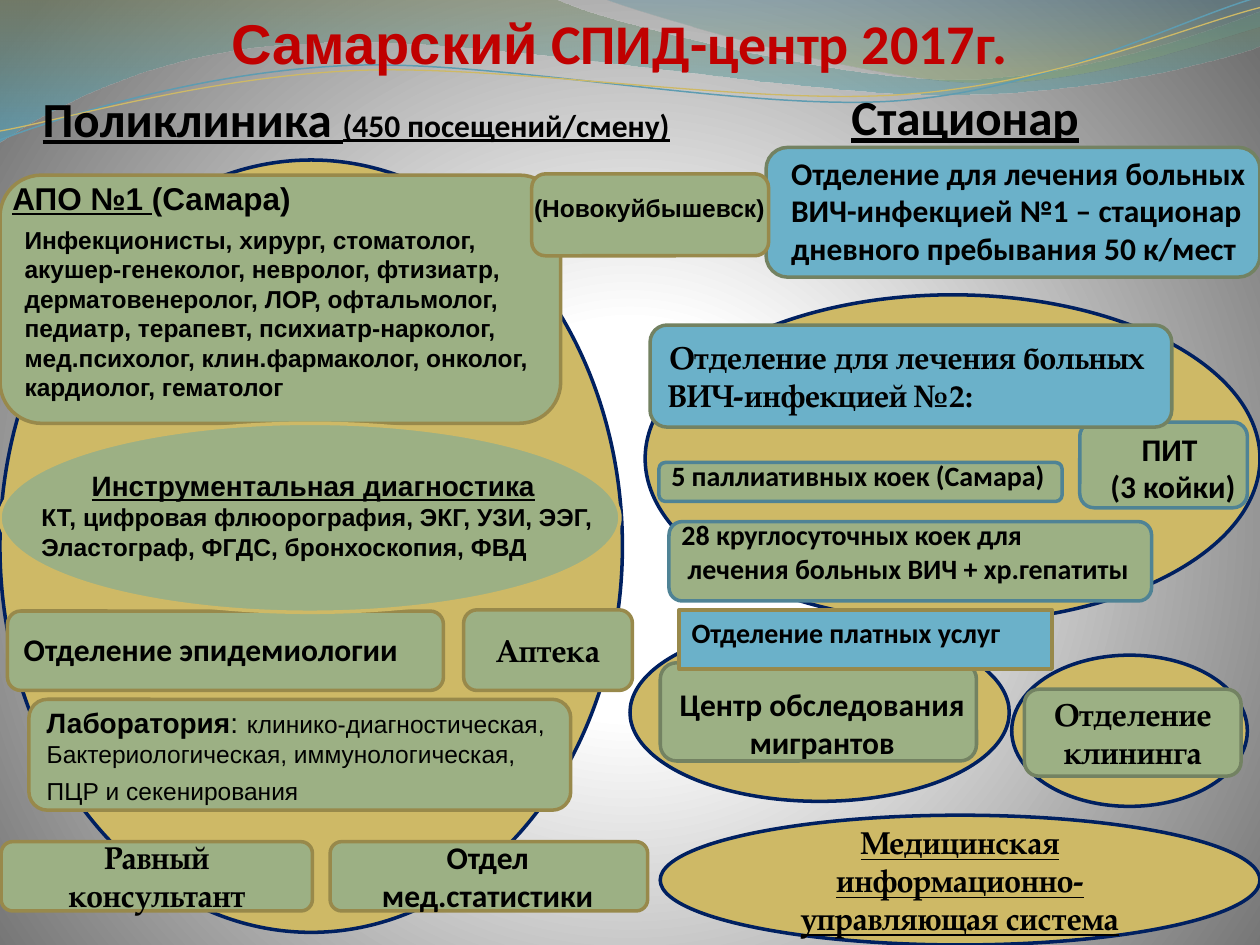
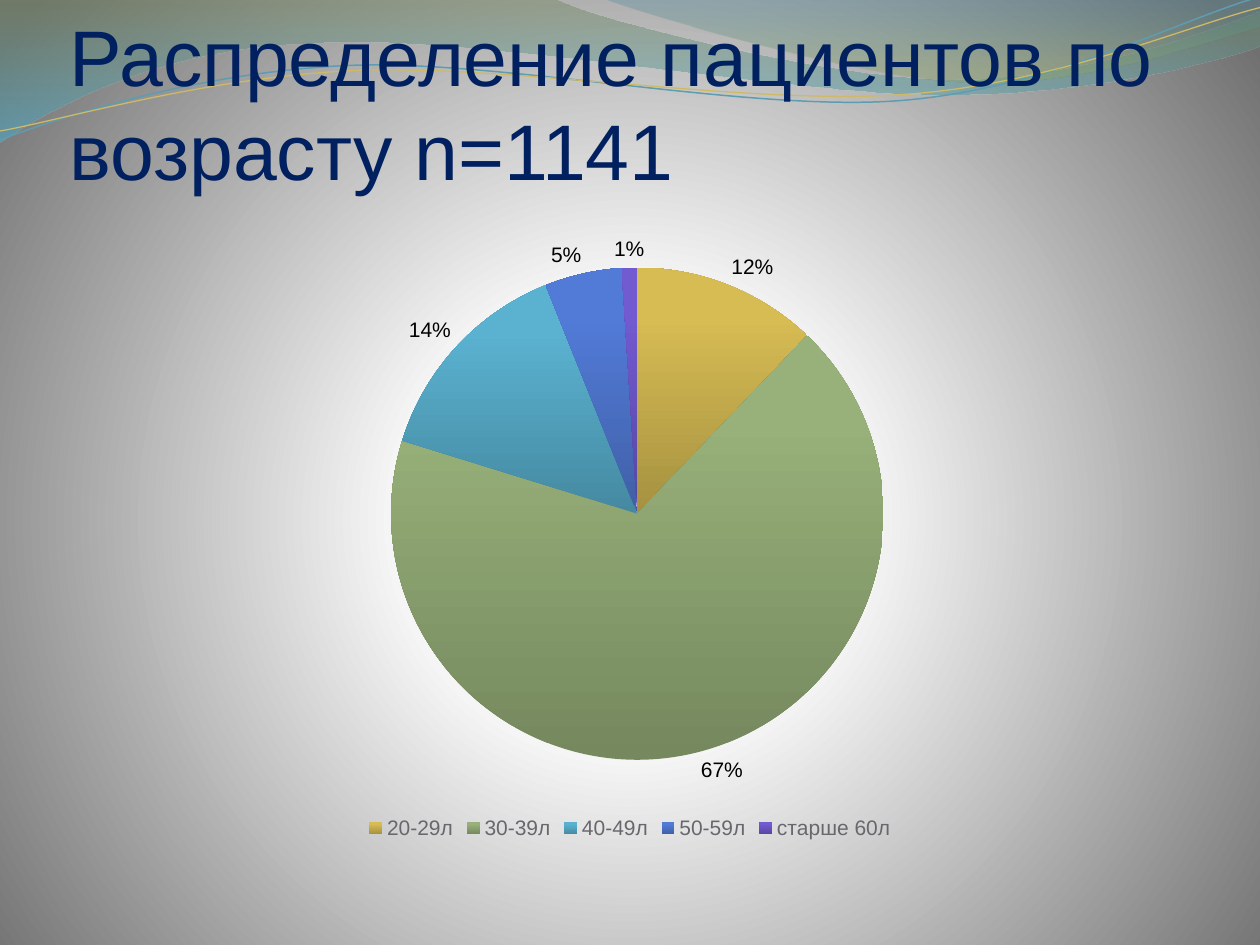
from copy import deepcopy
from dataclasses import dataclass

from lxml.etree import SubElement
from pptx import Presentation
from pptx.chart.data import CategoryChartData
from pptx.dml.color import RGBColor
from pptx.enum.chart import XL_CHART_TYPE, XL_LABEL_POSITION, XL_LEGEND_POSITION
from pptx.enum.shapes import MSO_SHAPE
from pptx.enum.text import MSO_ANCHOR, MSO_AUTO_SIZE, PP_ALIGN
from pptx.oxml.ns import qn
from pptx.util import Inches, Pt


@dataclass(frozen=True)
class Theme:
    sand: str = "CEB966"
    green: str = "9CB084"
    blue: str = "6BB1C9"
    navy: str = "002060"
    olive: str = "98894B"
    moss: str = "738262"
    steel: str = "4F8395"
    red: str = "C00000"
    black: str = "000000"
    gray: str = "69676D"
    white: str = "FFFFFF"
    dusk: str = "707070"
    sans: str = "Arial"
    plain: str = "Calibri"
    serif: str = "TeX Gyre Pagella"
    huge: int = 45
    title: int = 32
    head: int = 28
    main: int = 18
    mid: int = 16
    small: int = 14
    chart: int = 12
    edge: int = 2


T = Theme()
LEFT, MID = PP_ALIGN.LEFT, PP_ALIGN.CENTER


def say(frame, paras, anchor=MSO_ANCHOR.TOP, top=0.05, **form):
    """Write paragraphs, each a string or a list of (text, format) runs."""
    base = dict(size=T.main, font=T.plain, color=T.black, bold=True,
                under=False, align=LEFT, indent=0, before=0) | form
    frame.word_wrap = True
    frame.vertical_anchor = anchor
    frame.margin_top = Inches(top)
    for i, para in enumerate(paras):
        runs = [(para, {})] if isinstance(para, str) else para
        p = frame.paragraphs[0] if i == 0 else frame.add_paragraph()
        look = base | runs[0][1]
        p.alignment = look["align"]
        p.space_before = Pt(look["before"])
        if look["indent"]:
            p._p.get_or_add_pPr().set("indent", str(Inches(look["indent"])))
        for text, extra in runs:
            look = base | extra
            run = p.add_run()
            run.text = text
            run.font.size = Pt(look["size"])
            run.font.name = look["font"]
            run.font.bold = look["bold"]
            run.font.underline = look["under"]
            run.font.color.rgb = RGBColor.from_string(look["color"])


def fade(fill, stops, angle):
    """Fill with a two-stop gradient; the angle runs counter-clockwise."""
    fill.gradient()
    fill.gradient_angle = angle
    for stop, (place, color) in zip(fill.gradient_stops, stops):
        stop.position = place
        stop.color.rgb = RGBColor.from_string(color)


deck = Presentation()
deck.slide_width, deck.slide_height = Inches(10), Inches(7.5)
master = deck.slide_master
plan = deck.slide_layouts[5]
first, second = (deck.slides.add_slide(plan) for _ in range(2))

# Shared background: white glow in the middle, gray at the rim
fade(master.background.fill, [(0.25, T.white), (1, T.dusk)], 0)
grad = master.element.find(".//" + qn("a:gradFill"))
grad.remove(grad.find(qn("a:lin")))
stops = grad.find(qn("a:gsLst"))
stops.insert(0, deepcopy(stops[0]))
stops[0].set("pos", "0")
glow = SubElement(grad, qn("a:path"), path="circle")
SubElement(glow, qn("a:fillToRect"), l="10000", t="110000", r="10000", b="100000")

# Shared waves: a part is a line end (one point) or a Bezier curve (three)
waves = [
    ((0, 0), [[(4.4, -0.01)], [(4.76, 0.17), (6.64, 0.63), (7.58, 0.63)],
              [(8.53, 0.63), (9.58, 0.26), (10, 0.09)], [(10.01, 0.36)],
              [(9.83, 0.44), (8.7, 0.76), (7.46, 0.75)],
              [(6.22, 0.75), (3.82, 0.28), (2.57, 0.34)],
              [(1.29, 0.36), (0.46, 0.83), (-0.01, 1.13)]],
     dict(stops=[(0, "74855E"), (1, "4AACCE")], alphas=(45, 55))),
    ((4.79, -0.01), [[(5.09, 0.11), (6.82, 0.62), (7.69, 0.65)],
                     [(8.56, 0.69), (9.61, 0.32), (10, 0.21)], [(10, 0)]],
     dict(stops=[(0, "45889F"), (0.8, "8AA36D")], alphas=(30, 45))),
    ((0, 1.11), [[(0.48, 0.93), (1.58, 0.57), (2.77, 0.52)],
                 [(3.95, 0.47), (5.93, 0.89), (7.13, 0.8)],
                 [(8.33, 0.71), (9.38, 0.15), (9.98, -0.02)]],
     dict(line="5E9CB1", width=0.85)),
    ((0, 1.04), [[(0.47, 0.96), (1.64, 0.61), (2.83, 0.56)],
                 [(4.03, 0.51), (5.97, 0.84), (7.17, 0.75)],
                 [(8.36, 0.67), (9.41, 0.21), (10, 0.06)]],
     dict(line=T.sand, width=0.75)),
]
for layer, (start, parts, style) in enumerate(waves):
    dots = [(Inches(x), Inches(y)) for part in parts for x, y in part]
    pen = first.shapes.build_freeform(*map(Inches, start), scale=1.0)
    pen.add_line_segments(dots, close="stops" in style)
    wave = pen.convert_to_shape()
    wave.shadow.inherit = False
    legs = iter(list(wave.element.iter(qn("a:lnTo"))))
    for part in parts:
        leg = next(legs)
        if len(part) == 3:
            leg.tag = qn("a:cubicBezTo")
            for _ in range(2):
                spare = next(legs)
                leg.append(spare[0])
                spare.getparent().remove(spare)
    if "stops" in style:
        fade(wave.fill, style["stops"], 270)
        wave.line.fill.background()
        for tint, alpha in zip(wave.element.iter(qn("a:srgbClr")), style["alphas"]):
            SubElement(tint, qn("a:alpha"), val=str(alpha * 1000))
    else:
        wave.fill.background()
        wave.line.color.rgb = RGBColor.from_string(style["line"])
        wave.line.width = Pt(style["width"])
    master.shapes.element.insert(2 + layer, wave.element)

# Titles
titles = [
    (first, (0.51, 0, 8.82, 0.6),
     [[("Самарский", dict(font=T.sans)), (" СПИД-центр 2017г.", {})]],
     dict(size=T.title, color=T.red, align=MID)),
    (second, (0.55, 0.31, 9, 1.25), ["Распределение пациентов по возрасту n=1141"],
     dict(size=T.huge, color=T.navy, font=T.sans, bold=False)),
]
for slide, box, paras, form in titles:
    title = slide.shapes.title
    title.left, title.top, title.width, title.height = map(Inches, box)
    frame = title.text_frame
    frame.auto_size = MSO_AUTO_SIZE.NONE
    frame.margin_left = frame.margin_right = frame.margin_bottom = 0
    say(frame, paras, anchor=MSO_ANCHOR.BOTTOM, **form)

# Slide 1: departments, from back to front
OVAL, ROUND, RECT = MSO_SHAPE.OVAL, MSO_SHAPE.ROUNDED_RECTANGLE, MSO_SHAPE.RECTANGLE
hoop = (OVAL, T.sand, T.navy)
leaf = (ROUND, T.green, T.olive)
fern = (ROUND, T.green, T.moss)
pond = (ROUND, T.blue, T.moss)
bed = (ROUND, T.green, T.steel)
note = None
serif = dict(font=T.serif, align=MID)
mid = dict(size=T.mid)
wards = [
    (hoop, (5.12, 2.34, 4.88, 2.6), [], {}),
    (bed, (5.31, 4.14, 3.83, 0.63), [], {}),
    (bed, (5.23, 3.67, 3.2, 0.31), [], {}),
    (pond, (6.08, 1.17, 3.92, 1.03), [], {}),
    (note, (5.31, 4.06, 3.78, 0.64),
     ["28 круглосуточных коек для", " лечения больных ВИЧ + хр.гепатиты"], mid),
    (note, (6.66, 0.64, 2.36, 0.57), ["Стационар"], dict(size=T.head, under=True)),
    (note, (5.23, 3.59, 3.46, 0.37), ["5 паллиативных коек (Самара)"], mid),
    (bed, (8.57, 3.35, 1.33, 0.68), [], {}),
    (note, (8.62, 3.36, 1.38, 0.71), ["ПИТ ", "(3 койки)"], dict(align=MID)),
    (note, (6.18, 1.17, 3.82, 1.01),
     ["Отделение для лечения больных ВИЧ-инфекцией №1 – стационар "
      "дневного пребывания 50 к/мест"], {}),
    (hoop, (0, 1.27, 4.94, 6.13), [], {}),
    (note, (0.24, 0.65, 5.21, 0.57),
     [[("Поликлиника ", dict(size=T.head)), ("(450 посещений/смену)", {})]],
     dict(under=True)),
    (leaf, (0, 1.39, 4.45, 1.97),
     ["Инфекционисты, хирург, стоматолог,",
      "акушер-генеколог, невролог, фтизиатр,",
      "дерматовенеролог, ЛОР, офтальмолог,",
      "педиатр, терапевт, психиатр-нарколог,",
      "мед.психолог, клин.фармаколог, онколог, кардиолог, гематолог"],
     dict(size=T.small, font=T.sans, top=0.27)),
    (leaf, (0.06, 4.85, 3.46, 0.63), [], {}),
    (leaf, (0.23, 5.55, 4.3, 0.88),
     [[("Лаборатория", dict(size=T.mid, bold=True)), (":", dict(size=T.mid)),
       (" ", dict(size=T.main)), ("клинико-диагностическая,", {})],
      "Бактериологическая, иммунологическая,",
      [("ПЦР и секенирования", dict(before=4))]],
     dict(size=T.small, font=T.sans, bold=False, top=0.03)),
    (leaf, (2.62, 6.68, 2.52, 0.55), [], {}),
    (note, (0.09, 4.95, 3.47, 0.4), ["Отделение эпидемиологии"], {}),
    (note, (0, 1.37, 4.36, 0.4),
     [[("АПО №1 ", dict(under=True)), ("(Самара)", {})]], dict(font=T.sans)),
    (leaf, (4.22, 1.38, 1.88, 0.65), [], {}),
    (note, (4.14, 1.48, 2.03, 0.34), ["(Новокуйбышевск)"],
     dict(size=T.small, font=T.sans)),
    (note, (2.73, 6.6, 2.28, 0.71), ["Отдел мед.статистики"], dict(align=MID)),
    (hoop, (5, 4.95, 3.01, 1.41), [], {}),
    (fern, (5.24, 5.26, 2.51, 0.78), [], {}),
    (note, (5.23, 5.39, 2.59, 0.71), ["Центр обследования мигрантов"], dict(align=MID)),
    ((OVAL, T.green, T.sand), (0, 3.36, 4.92, 1.5), [], {}),
    (note, (0.23, 3.67, 4.87, 0.84),
     [[("Инструментальная диагностика", dict(size=T.mid, under=True, indent=0.4))],
      "КТ, цифровая флюорография, ЭКГ, УЗИ, ЭЭГ,",
      "Эластограф, ФГДС, бронхоскопия, ФВД"],
     dict(size=T.small, font=T.sans)),
    (leaf, (3.68, 4.84, 1.34, 0.64), ["Аптека"], serif),
    (pond, (5.16, 2.58, 4.14, 0.81),
     ["Отделение для лечения больных ", [("ВИЧ-инфекцией №2:", dict(align=LEFT))]], serif),
    (hoop, (8.03, 5.2, 1.87, 1.2), [], {}),
    (fern, (8.13, 5.47, 1.72, 0.69), ["Отделение клининга"], serif),
    (leaf, (0.01, 6.68, 2.47, 0.55), ["Равный консультант"], serif),
    (hoop, (5.24, 6.47, 4.76, 1.03),
     ["Медицинская информационно-управляющая система"], serif | dict(under=True)),
    ((RECT, T.blue, T.olive), (5.39, 4.84, 2.96, 0.47), [], {}),
    (note, (5.39, 4.84, 3.75, 0.37), ["Отделение платных услуг"], mid),
]
for kind, box, paras, form in wards:
    place = [Inches(n) for n in box]
    if kind is note:
        item = first.shapes.add_textbox(*place)
        item.text_frame.auto_size = MSO_AUTO_SIZE.SHAPE_TO_FIT_TEXT
        say(item.text_frame, paras, **form)
        continue
    preset, fill, edge = kind
    item = first.shapes.add_shape(preset, *place)
    item.shadow.inherit = False
    item.fill.solid()
    item.fill.fore_color.rgb = RGBColor.from_string(fill)
    item.line.color.rgb = RGBColor.from_string(edge)
    item.line.width = Pt(T.edge)
    if paras:
        say(item.text_frame, paras, anchor=MSO_ANCHOR.MIDDLE, **form)

# Slide 2: age groups as name, share, dark and light shade
ages = [
    ("20-29л", 12, "A59140", "D7BC54"),
    ("30-39л", 67, "75885E", "98B17A"),
    ("40-49л", 14, "4589A1", "5AB2D0"),
    ("50-59л", 5, "405FA6", "527BD8"),
    ("старше 60л", 1, "5845A1", "725AD0"),
]
data = CategoryChartData()
data.categories = [age[0] for age in ages]
data.add_series("Series 1", [age[1] for age in ages])
area = [Inches(n) for n in (0.5, 1.75, 9, 4.95)]
pie = second.shapes.add_chart(XL_CHART_TYPE.PIE, *area, data).chart
pie.has_title = False
pie.has_legend = True
pie.legend.position = XL_LEGEND_POSITION.BOTTOM
pie.legend.include_in_layout = False
plot = pie.plots[0]
plot.vary_by_categories = True
plot.has_data_labels = True
tags = plot.data_labels
tags.show_value = True
tags.show_percentage = False
tags.number_format = '0"%"'
tags.number_format_is_linked = False
tags.position = XL_LABEL_POSITION.OUTSIDE_END
for font, color in ((pie.font, T.black), (pie.legend.font, T.gray), (tags.font, T.black)):
    font.name = T.sans
    font.size = Pt(T.chart)
    font.color.rgb = RGBColor.from_string(color)
for n, (_, _, dark, light) in enumerate(ages):
    wedge = plot.series[0].points[n].format
    fade(wedge.fill, [(0, dark), (0.8, light)], 90)
    wedge.line.fill.background()

deck.save("out.pptx")
